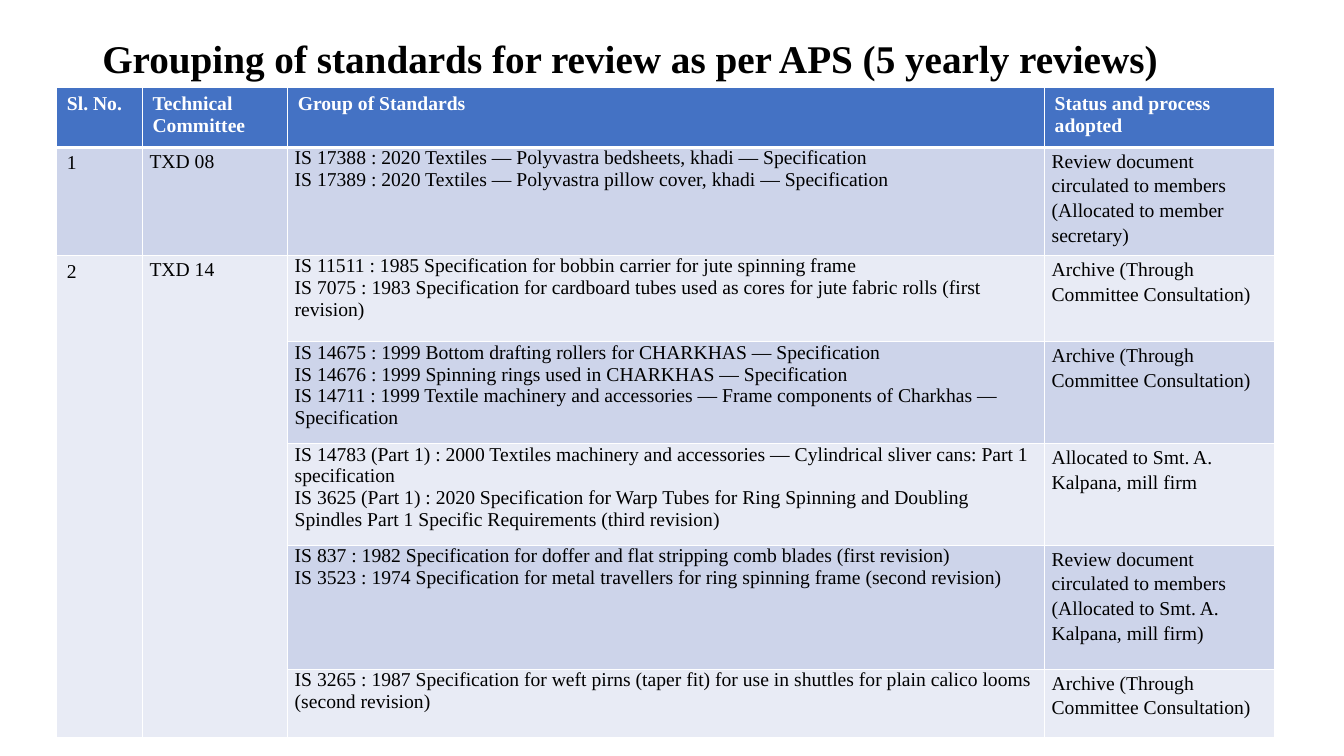
"""Build a slide with a table of textile standards grouped for review."""
from dataclasses import dataclass

from lxml.etree import SubElement as Sub
from pptx import Presentation as Deck
from pptx.dml.color import RGBColor as Rgb
from pptx.enum.text import MSO_ANCHOR as Anchor
from pptx.oxml.ns import qn
from pptx.table import Table, _Cell as Cell
from pptx.text.text import TextFrame as Frame
from pptx.util import Pt

FONT = "Times New Roman"
HUES = {
    "head": "4472C4",
    "dark": "CDD4EA",
    "light": "E8EBF5",
    "white": "FFFFFF",
    "black": "000000",
}


@dataclass(frozen=True)
class Look:
    """Text and margin format of a cell."""
    hue: str = "black"
    bold: bool = False
    side: float = 5.04
    top: float = 0
    space: float | None = None


@dataclass(frozen=True)
class Group:
    """One row of the table body."""
    high: float
    items: str
    status: str
    number: str = ""
    panel: str = ""


HEAD = Look("white", True, 7.2, 3.6)
COUNT = Look(side=7.2, top=3.6)
PLAIN = Look()
LOOSE = Look(space=1.15)
WIDTHS = (61.2, 103.7, 540.7, 164.2)
TITLES = ("Sl. No.", "Technical Committee", "Group of Standards",
          "Status and process adopted")
ARCHIVE = "Archive (Through Committee Consultation)"
GROUPS = (
    Group(71.3,
          "IS 17388 : 2020 Textiles — Polyvastra bedsheets, khadi — Specification\n"
          "IS 17389 : 2020 Textiles — Polyvastra pillow cover, khadi — Specification",
          "Review document circulated to members (Allocated to member secretary)",
          "1", "TXD 08"),
    Group(61.7,
          "IS 11511 : 1985 Specification for bobbin carrier for jute spinning frame\n"
          "IS 7075 : 1983 Specification for cardboard tubes used as cores for jute "
          "fabric rolls (first revision)",
          ARCHIVE, "2", "TXD 14"),
    Group(72.7,
          "IS 14675 : 1999 Bottom drafting rollers for CHARKHAS — Specification\n"
          "IS 14676 : 1999 Spinning rings used in CHARKHAS — Specification\n"
          "IS 14711 : 1999 Textile machinery and accessories — Frame components of "
          "Charkhas — Specification",
          ARCHIVE),
    Group(72.7,
          "IS 14783 (Part 1) : 2000 Textiles machinery and accessories — Cylindrical "
          "sliver cans: Part 1 specification\n"
          "IS 3625 (Part 1) : 2020 Specification for Warp Tubes for Ring Spinning and "
          "Doubling Spindles Part 1 Specific Requirements (third revision)",
          "Allocated to Smt. A. Kalpana, mill firm"),
    Group(88.6,
          "IS 837 : 1982 Specification for doffer and flat stripping comb blades "
          "(first revision)\n"
          "IS 3523 : 1974 Specification for metal travellers for ring spinning frame "
          "(second revision)",
          "Review document circulated to members\n"
          "(Allocated to Smt. A. Kalpana, mill firm)"),
    Group(48.7,
          "IS 3265 : 1987 Specification for weft pirns (taper fit) for use in shuttles "
          "for plain calico looms (second revision)",
          ARCHIVE),
)


def write(frame: Frame, text: str, size: float, look: Look) -> None:
    """Put text in a frame and format its runs."""
    frame.text = text
    for para in frame.paragraphs:
        if look.space:
            para.line_spacing = look.space
        for run in para.runs:
            font = run.font
            font.name, font.size, font.bold = FONT, Pt(size), look.bold
            font.color.rgb = Rgb.from_string(HUES[look.hue])


def edge(cell: Cell, side: str, width: float) -> None:
    """Draw one white border of a cell."""
    line = Sub(cell._tc.get_or_add_tcPr(), qn(f"a:{side}"), w=str(Pt(width)))
    Sub(Sub(line, qn("a:solidFill")), qn("a:srgbClr"), val=HUES["white"])


def paint(cell: Cell, text: str, fill: str, look: Look,
          top: float = 1, base: float = 1) -> None:
    """Fill a cell with borders, colour and text."""
    for side, width in (("lnL", 1), ("lnR", 1), ("lnT", top), ("lnB", base)):
        edge(cell, side, width)
    cell.fill.solid()
    cell.fill.fore_color.rgb = Rgb.from_string(HUES[fill])
    cell.margin_left = cell.margin_right = Pt(look.side)
    cell.margin_top = cell.margin_bottom = Pt(look.top)
    write(cell.text_frame, text, 14, look)


def fill_rows(table: Table) -> None:
    """Fill the header and the body of the table."""
    for col, width in zip(table.columns, WIDTHS):
        col.width = Pt(width)
    table.rows[0].height = Pt(42.5)
    for spot, text in enumerate(TITLES):
        paint(table.cell(0, spot), text, "head", HEAD, base=3)
    for row, group in enumerate(GROUPS, 1):
        table.rows[row].height = Pt(group.high)
        band = "dark" if row % 2 else "light"
        parts = ((group.number, COUNT), (group.panel, LOOSE),
                 (group.items, PLAIN), (group.status, LOOSE))
        for spot, (text, look) in enumerate(parts):
            hue = "light" if not text else band
            paint(table.cell(row, spot), text, hue, look, top=3 if row == 1 else 1)
    for spot in (0, 1):
        table.cell(2, spot).merge(table.cell(len(GROUPS), spot))


def main() -> None:
    """Create the deck and save it."""
    deck = Deck()
    deck.slide_width, deck.slide_height = Pt(960), Pt(540)
    shapes = deck.slides.add_slide(deck.slide_layouts[6]).shapes
    frame = shapes.add_textbox(Pt(66), Pt(11.5), Pt(828), Pt(64)).text_frame
    frame.word_wrap = True
    frame.vertical_anchor = Anchor.MIDDLE
    write(frame, "Grouping of standards for review as per APS (5 yearly reviews)",
          28, Look(bold=True, space=0.9))
    high = 42.5 + sum(group.high for group in GROUPS)
    grid = shapes.add_table(len(GROUPS) + 1, len(WIDTHS), Pt(40.6), Pt(62.8),
                            Pt(sum(WIDTHS)), Pt(high))
    fill_rows(grid.table)
    deck.save("out.pptx")


if __name__ == "__main__":
    main()
